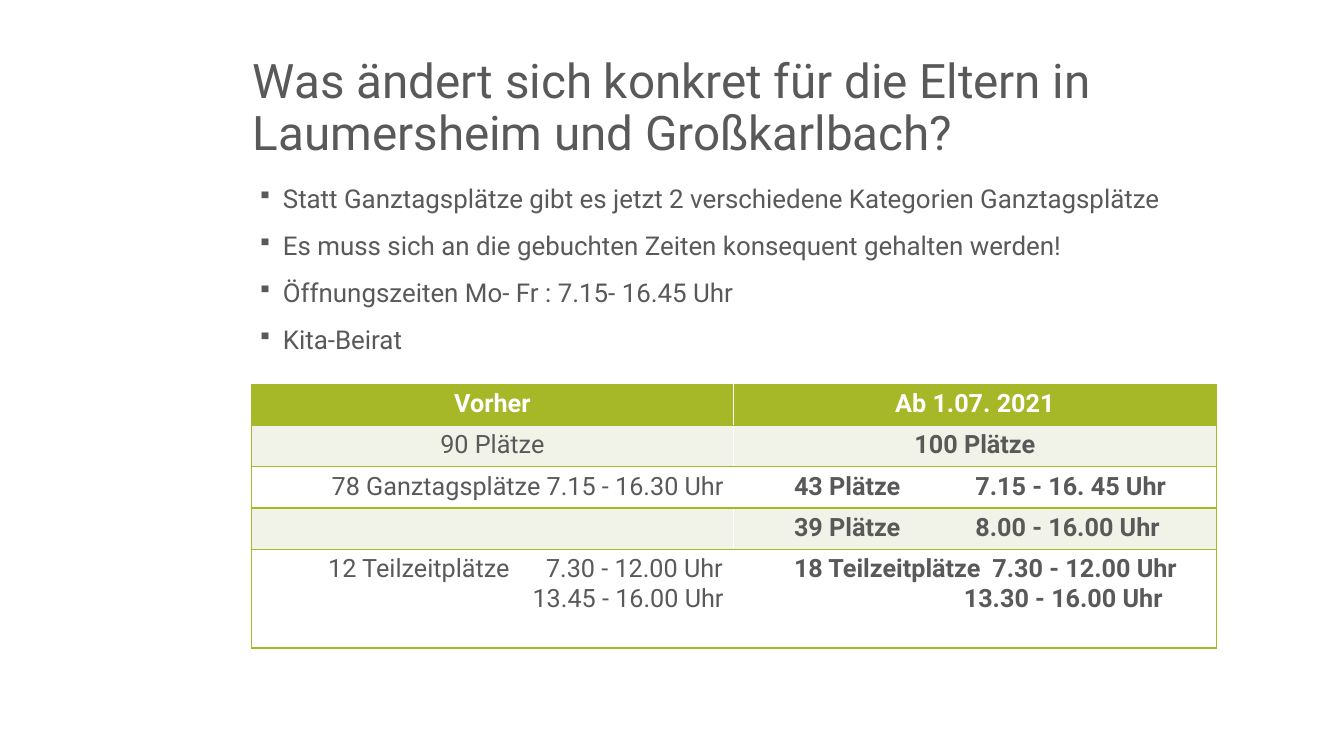
from dataclasses import dataclass

from lxml import etree
from pptx import Presentation
from pptx.dml.color import RGBColor
from pptx.enum.text import MSO_ANCHOR, MSO_AUTO_SIZE, PP_ALIGN
from pptx.oxml.ns import qn
from pptx.util import Cm, Pt

LEFT, CENTER, RIGHT = PP_ALIGN.LEFT, PP_ALIGN.CENTER, PP_ALIGN.RIGHT
BOTTOM = MSO_ANCHOR.BOTTOM
NO_AUTOFIT = MSO_AUTO_SIZE.NONE

FONT = "Roboto"
COLORS = {"text": "595959", "green": "A6B727", "band": "F1F3E8", "white": "FFFFFF"}
TEXT_LEFT, TEXT_WIDTH = Cm(6.12), Cm(26.04)
ROW_HEIGHT, LAST_ROW_HEIGHT = Cm(1.04), Cm(2.49)
COLUMN_WIDTH = Cm(12.16)

TITLE = "Was ändert sich konkret für die Eltern in Laumersheim und Großkarlbach?"
CHANGES = [
    "Statt Ganztagsplätze gibt es jetzt 2 verschiedene Kategorien Ganztagsplätze",
    "Es muss sich an die gebuchten Zeiten konsequent gehalten werden!",
    "Öffnungszeiten Mo- Fr : 7.15- 16.45 Uhr",
    "Kita-Beirat",
]


@dataclass
class Line:
    text: str
    align: PP_ALIGN = CENTER
    tab_cm: float = 0


@dataclass
class Entry:
    lines: list[Line]
    indent_cm: float = 0.25


PLACES = [
    [Entry([Line("Vorher")]), Entry([Line("Ab 1.07. 2021")])],
    [Entry([Line("90 Plätze")]), Entry([Line("100 Plätze")])],
    [
        Entry([Line("78 Ganztagsplätze 7.15 - 16.30 Uhr", RIGHT)]),
        Entry([Line("43 Plätze\t7.15 - 16. 45 Uhr", LEFT, 4.57)], 1.52),
    ],
    [Entry([]), Entry([Line("39 Plätze\t8.00 - 16.00 Uhr", LEFT, 4.57)], 1.52)],
    [
        Entry([
            Line("12 Teilzeitplätze\t7.30 - 12.00 Uhr", LEFT, 5.49),
            Line("13.45 - 16.00 Uhr", RIGHT),
        ], 1.94),
        Entry([
            Line("18 Teilzeitplätze\t7.30 - 12.00 Uhr", LEFT, 5),
            Line("\t13.30 - 16.00 Uhr", LEFT, 4.28),
        ], 1.52),
    ],
]


def set_font(paragraph, size: float, color: str, bold: bool = False) -> None:
    font = paragraph.font
    font.name, font.size, font.bold = FONT, Pt(size), bold
    font.color.rgb = RGBColor.from_string(COLORS[color])


def add_bullet(paragraph) -> None:
    properties = paragraph._p.get_or_add_pPr()
    properties.set("marL", str(Cm(0.76)))
    properties.set("indent", str(-Cm(0.64)))
    etree.SubElement(properties, qn("a:buSzPct"), val="80000")
    etree.SubElement(properties, qn("a:buChar"), char="▪")


def add_tab(paragraph, position_cm: float) -> None:
    tabs = etree.SubElement(paragraph._p.get_or_add_pPr(), qn("a:tabLst"))
    etree.SubElement(tabs, qn("a:tab"), pos=str(Cm(position_cm)), algn="l")


def add_borders(cell, sides: str) -> None:
    properties = cell._tc.get_or_add_tcPr()
    for side in sides:
        border = etree.SubElement(properties, qn(f"a:ln{side}"), w=str(Pt(1)))
        fill = etree.SubElement(border, qn("a:solidFill"))
        etree.SubElement(fill, qn("a:srgbClr"), val=COLORS["green"])


def fill_cell(cell, entry: Entry, row: int, column: int) -> None:
    add_borders(cell, ("L" if column == 0 else "R") + "TB")
    background = "green" if row == 0 else "band" if row % 2 else "white"
    cell.fill.solid()
    cell.fill.fore_color.rgb = RGBColor.from_string(COLORS[background])
    cell.margin_left = Cm(entry.indent_cm)
    frame = cell.text_frame
    for number, line in enumerate(entry.lines):
        paragraph = frame.add_paragraph() if number else frame.paragraphs[0]
        paragraph.text = line.text
        paragraph.alignment = line.align
        if line.tab_cm:
            add_tab(paragraph, line.tab_cm)
        set_font(paragraph, 18, "text" if row else "white", row == 0 or column == 1)


def add_title(slide) -> None:
    title = slide.shapes.title
    title.left, title.top = TEXT_LEFT, Cm(0.84)
    title.width, title.height = TEXT_WIDTH, Cm(3.33)
    frame = title.text_frame
    frame.text = TITLE
    frame.word_wrap = True
    frame.auto_size = NO_AUTOFIT
    frame.vertical_anchor = BOTTOM
    paragraph = frame.paragraphs[0]
    paragraph.alignment = LEFT
    paragraph.line_spacing = 0.9
    set_font(paragraph, 34, "text")


def add_changes(slide) -> None:
    box = slide.shapes.add_textbox(TEXT_LEFT, Cm(4.7), TEXT_WIDTH, Cm(4.5))
    frame = box.text_frame
    frame.word_wrap = True
    for number, change in enumerate(CHANGES):
        paragraph = frame.add_paragraph() if number else frame.paragraphs[0]
        paragraph.text = change
        add_bullet(paragraph)
        paragraph.line_spacing = 0.7
        if number:
            paragraph.space_before = Pt(18)
        set_font(paragraph, 18.5, "text")


def add_places(slide) -> None:
    rows, columns = len(PLACES), len(PLACES[0])
    height = ROW_HEIGHT * (rows - 1) + LAST_ROW_HEIGHT
    table = slide.shapes.add_table(
        rows, columns, Cm(6.33), Cm(9.68), COLUMN_WIDTH * columns, height
    ).table
    for column in table.columns:
        column.width = COLUMN_WIDTH
    for row, entries in enumerate(PLACES):
        table.rows[row].height = ROW_HEIGHT if row < rows - 1 else LAST_ROW_HEIGHT
        for column, entry in enumerate(entries):
            fill_cell(table.cell(row, column), entry, row, column)


def main() -> None:
    presentation = Presentation()
    presentation.slide_width, presentation.slide_height = Cm(33.87), Cm(19.05)
    slide = presentation.slides.add_slide(presentation.slide_layouts[5])
    add_title(slide)
    add_changes(slide)
    add_places(slide)
    presentation.save("out.pptx")


if __name__ == "__main__":
    main()
